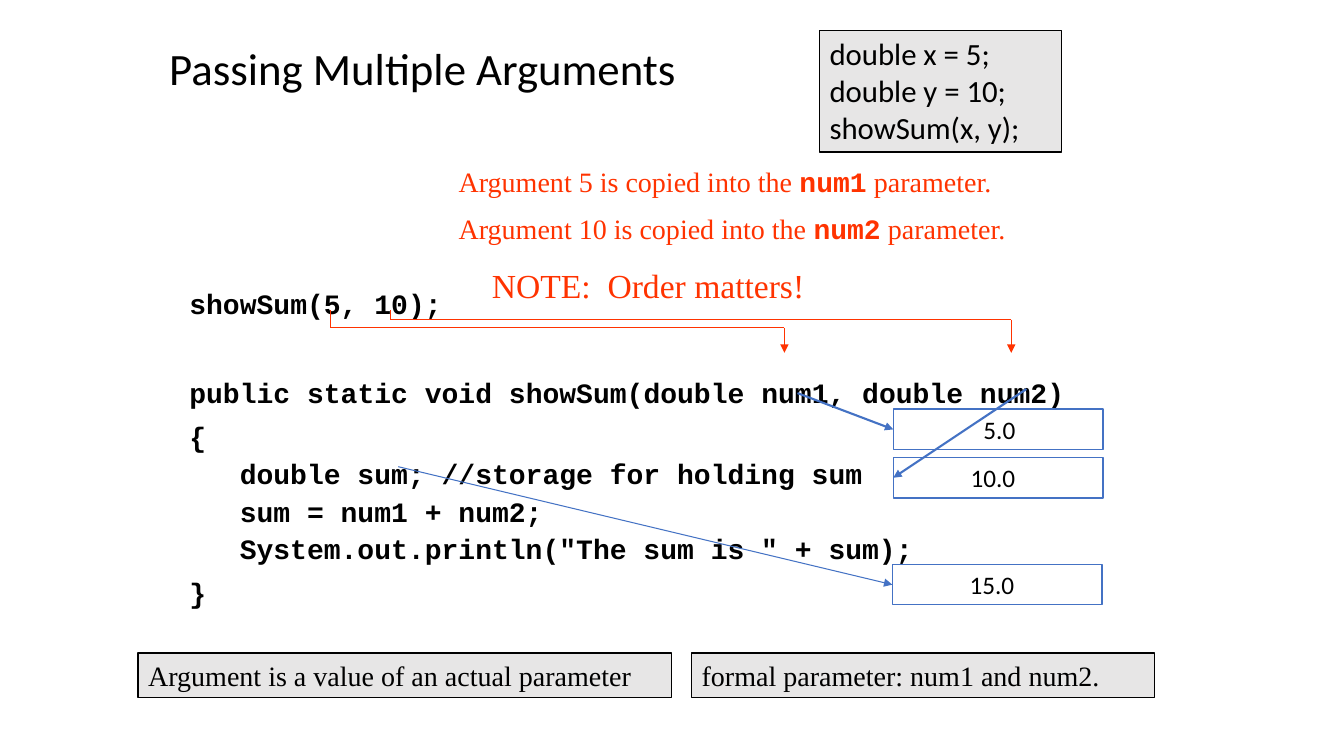
"""Builds a slide on passing multiple arguments to a Java method."""
from dataclasses import dataclass

from lxml import etree
from pptx import Presentation
from pptx.dml.color import RGBColor
from pptx.enum.shapes import MSO_CONNECTOR as Connector, MSO_SHAPE as Shape
from pptx.enum.text import MSO_ANCHOR as Anchor, MSO_AUTO_SIZE as AutoSize, PP_ALIGN as Align
from pptx.oxml.ns import qn
from pptx.util import Inches, Pt


@dataclass(frozen=True)
class Theme:
    black: str = "000000"
    white: str = "FFFFFF"
    grey: str = "E7E6E6"
    red: str = "FF3300"
    blue: str = "4472C4"
    sans: str = "Calibri"
    serif: str = "Times New Roman"
    mono: str = "Courier New"
    title: int = 32
    note: int = 24
    call: int = 22
    body: int = 20
    value: int = 18


THEME = Theme()

TITLE = "Passing Multiple Arguments"
CODE = [
    (0, 0, "showSum(5, 10);"),
    (0, 42, "public static void showSum(double num1, double num2)"),
    (0, 10, "{"),
    (1, 5, "double sum; //storage for holding sum"),
    (1, 5, "sum = num1 + num2;"),
    (1, 5, 'System.out.println("The sum is " + sum);'),
    (0, 10, "}"),
]
COPIES = [("5", "num1"), ("10", "num2")]
NOTE = "NOTE:  Order matters!"
CALL = ["double x = 5;", "double y = 10;", "showSum(x, y);"]
DEFINITIONS = [
    ("Argument is a value of an actual parameter", 1.37, 5.29),
    ("formal parameter: num1 and num2.", 6.86, 4.59),
]
ARGUMENT_PATHS = [(3.28, 3.25, 7.78), (3.87, 3.17, 10.03)]
PATH_TOP, PATH_BOTTOM = 3.08, 3.5
VARIABLES = [
    ("5.0", 8.86, 4.06, (7.91, 3.9), 1.5),
    ("10.0", 8.86, 4.54, (10.18, 3.86), 1.5),
    ("15.0", 8.85, 5.6, (3.95, 4.63), 0.75),
]


def write(paragraph, text, size=THEME.body, font=THEME.serif, color=THEME.black, bold=False):
    run = paragraph.add_run()
    run.text = text
    run.font.size = Pt(size)
    run.font.name = font
    run.font.bold = bold
    run.font.color.rgb = RGBColor.from_string(color)


def add_paragraph(frame, index):
    return frame.add_paragraph() if index else frame.paragraphs[0]


def add_frame(slide, left, top, width, height):
    box = slide.shapes.add_textbox(Inches(left), Inches(top), Inches(width), Inches(height))
    box.text_frame.word_wrap = True
    return box.text_frame


def add_panel(slide, left, top, width, height, fill, line):
    panel = slide.shapes.add_shape(
        Shape.RECTANGLE, Inches(left), Inches(top), Inches(width), Inches(height))
    panel.shadow.inherit = False
    panel.fill.solid()
    panel.fill.fore_color.rgb = RGBColor.from_string(fill)
    panel.line.color.rgb = RGBColor.from_string(line)
    panel.line.width = Pt(1)
    frame = panel.text_frame
    frame.word_wrap = True
    frame.auto_size = AutoSize.SHAPE_TO_FIT_TEXT
    frame.vertical_anchor = Anchor.TOP
    return panel


def add_line(slide, start, end, color, width=0.75, arrow=False):
    line = slide.shapes.add_connector(Connector.STRAIGHT, *map(Inches, start + end))
    line.line.color.rgb = RGBColor.from_string(color)
    line.line.width = Pt(width)
    properties = line._element.spPr
    if arrow:
        etree.SubElement(properties.find(qn("a:ln")), qn("a:tailEnd"), type="triangle")
    etree.SubElement(properties, qn("a:effectLst"))
    return line


def add_code(slide):
    frame = add_frame(slide, 1.78, 1.75, 9.76, 5.17)
    frame.margin_top = Inches(1.13)
    for index, (level, space, text) in enumerate(CODE):
        paragraph = add_paragraph(frame, index)
        paragraph.level = level
        paragraph.line_spacing = 0.9
        paragraph.space_before = Pt(space)
        indent = paragraph._p.get_or_add_pPr()
        indent.set("marL", str(Inches(0.25 + 0.5 * level)))
        indent.set("indent", str(Inches(-0.25)))
        write(paragraph, text, font=THEME.mono, bold=True)


def add_remarks(slide):
    copies = add_frame(slide, 4.45, 1.58, 6.69, 0.93)
    for index, (value, parameter) in enumerate(COPIES):
        paragraph = add_paragraph(copies, index)
        paragraph.space_before = Pt(10 * index)
        write(paragraph, f"Argument {value} is copied into the ", color=THEME.red)
        write(paragraph, parameter, font=THEME.mono, color=THEME.red, bold=True)
        write(paragraph, " parameter.", color=THEME.red)
    note = add_frame(slide, 4.78, 2.58, 4.7, 0.5)
    write(note.paragraphs[0], NOTE, size=THEME.note, color=THEME.red)


def add_variables(slide):
    for value, left, top, source, width in VARIABLES:
        panel = add_panel(slide, left, top, 2.08, 0.4, THEME.white, THEME.blue)
        panel.text_frame.margin_right = Inches(0.87)
        paragraph = panel.text_frame.paragraphs[0]
        paragraph.alignment = Align.RIGHT
        write(paragraph, value, size=THEME.value, font=THEME.sans)
        arrow = add_line(slide, source, (left, top + 0.2), THEME.blue, width, arrow=True)
        arrow.end_connect(panel, 1)


def add_panels(slide):
    for text, left, width in DEFINITIONS:
        panel = add_panel(slide, left, 6.48, width, 0.44, THEME.grey, THEME.black)
        paragraph = panel.text_frame.paragraphs[0]
        paragraph.alignment = Align.LEFT
        write(paragraph, text)
    call = add_panel(slide, 8.13, 0.3, 2.4, 1.21, THEME.grey, THEME.black)
    for index, text in enumerate(CALL):
        paragraph = add_paragraph(call.text_frame, index)
        paragraph.alignment = Align.LEFT
        write(paragraph, text, size=THEME.call, font=THEME.sans)


def main():
    deck = Presentation()
    deck.slide_width, deck.slide_height = Inches(13.33), Inches(7.5)
    slide = deck.slides.add_slide(deck.slide_layouts[6])
    title = add_frame(slide, 1.58, 0.16, 5.45, 1.09)
    title.vertical_anchor = Anchor.MIDDLE
    title.paragraphs[0].line_spacing = 0.9
    write(title.paragraphs[0], TITLE, size=THEME.title, font=THEME.sans)
    add_code(slide)
    add_remarks(slide)
    for start, level, end in ARGUMENT_PATHS:
        add_line(slide, (start, PATH_TOP), (start, level), THEME.red)
        add_line(slide, (start, level), (end, level), THEME.red)
        add_line(slide, (end, level), (end, PATH_BOTTOM), THEME.red, arrow=True)
    add_variables(slide)
    add_panels(slide)
    deck.save("out.pptx")


if __name__ == "__main__":
    main()
